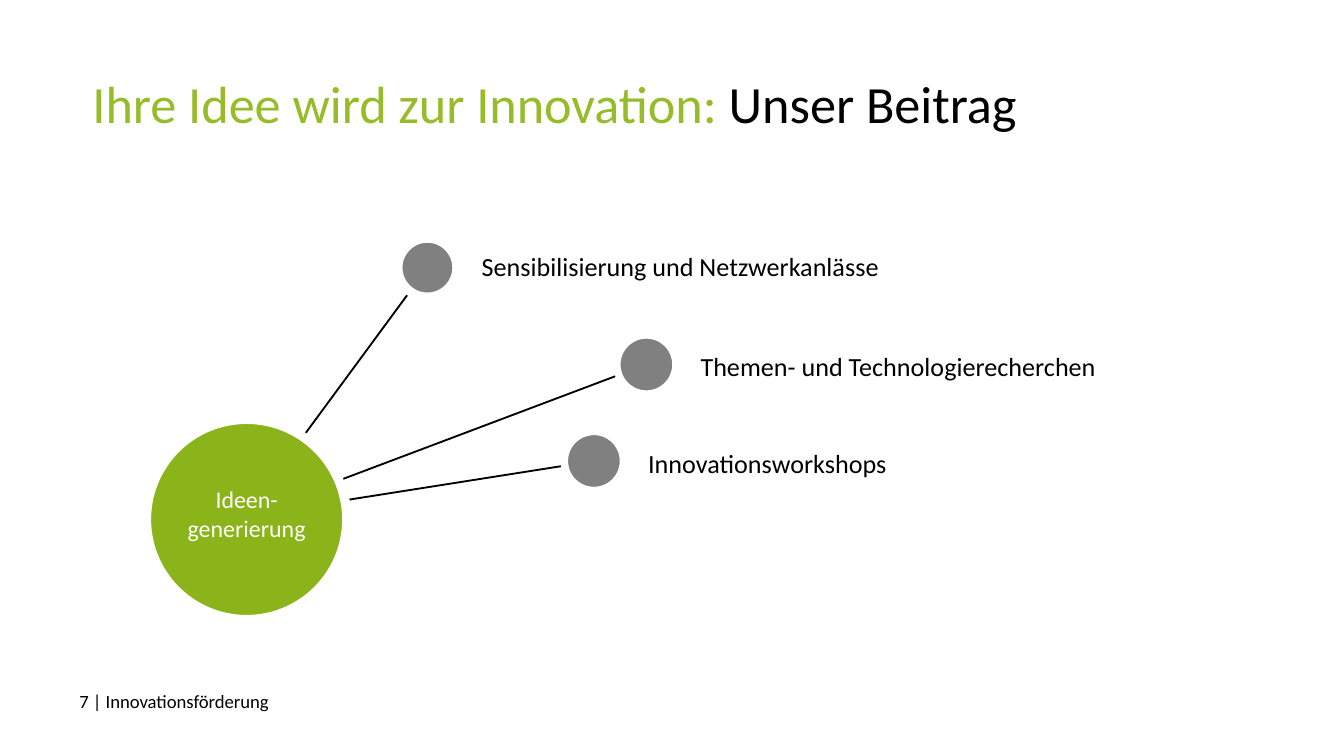
from pptx import Presentation
from pptx.dml.color import RGBColor
from pptx.enum.shapes import MSO_CONNECTOR, MSO_SHAPE
from pptx.enum.text import MSO_ANCHOR, PP_ALIGN
from pptx.oxml.ns import qn
from pptx.util import Pt
from lxml import etree

STRAIGHT = MSO_CONNECTOR.STRAIGHT
OVAL = MSO_SHAPE.OVAL
TOP, MIDDLE = MSO_ANCHOR.TOP, MSO_ANCHOR.MIDDLE
LEFT, CENTER = PP_ALIGN.LEFT, PP_ALIGN.CENTER

FONT = "Calibri"
BLACK, WHITE, GRAY = "000000", "FFFFFF", "808080"
TITLE_GREEN, HUB_GREEN = "97BC29", "8AB419"

TITLE = [("Ihre Idee wird zur Innovation:", TITLE_GREEN), (" Unser Beitrag", BLACK)]
FOOTER = "7 | Innovationsförderung"
HUB_LINES = ["Ideen-", "generierung"]
HUB_CENTER, HUB_SIZE = (132.1, 278.3), 107.3
LINE_START = (131, 276.5)
NODE_SIZE = 31.7
LABEL_SIZE = (272, 34)
LABEL_GAP = 12
SMALL_INSETS, LARGE_INSETS = (6.5, 3), (17, 8.5)

# label, node centre, outline width, vertical label offset
NODES = [
    ("Innovationsworkshops", (318.2, 247), 4, 1),
    ("Themen- und Technologierecherchen", (346.3, 195.3), 4, 1),
    ("Sensibilisierung und Netzwerkanlässe", (229, 143.4), 5, -1),
]


def color(value):
    """Return the colour for a hex string."""
    return RGBColor.from_string(value)


def write_text(shape, paragraphs, size, insets, align=LEFT, anchor=TOP):
    """Fill a shape with paragraphs, each a list of (text, colour) runs."""
    frame = shape.text_frame
    frame.word_wrap = True
    frame.vertical_anchor = anchor
    frame.margin_left = frame.margin_right = Pt(insets[0])
    frame.margin_top = frame.margin_bottom = Pt(insets[1])
    for index, runs in enumerate(paragraphs):
        paragraph = frame.add_paragraph() if index else frame.paragraphs[0]
        paragraph.alignment = align
        for text, run_color in runs:
            run = paragraph.add_run()
            run.text = text
            run.font.name = FONT
            run.font.size = Pt(size)
            run.font.color.rgb = color(run_color)


def add_text(slide, box, paragraphs, **text_format):
    """Add a text box at left, top, width, height."""
    shape = slide.shapes.add_textbox(*map(Pt, box))
    write_text(shape, paragraphs, **text_format)


def add_circle(slide, center, diameter, fill, outline_width):
    """Add a white-outlined circle around a centre."""
    left, top = (value - diameter / 2 for value in center)
    circle = slide.shapes.add_shape(OVAL, Pt(left), Pt(top), Pt(diameter), Pt(diameter))
    circle.shadow.inherit = False
    circle.fill.solid()
    circle.fill.fore_color.rgb = color(fill)
    circle.line.color.rgb = color(WHITE)
    circle.line.width = Pt(outline_width)


def add_line(slide, start, end):
    """Add a thin black line without shadow."""
    line = slide.shapes.add_connector(STRAIGHT, *map(Pt, start + end))
    line.line.color.rgb = color(BLACK)
    line.line.width = Pt(1)
    etree.SubElement(line._element.spPr, qn("a:effectLst"))


def add_node(slide, label, center, outline_width, label_offset):
    """Add a node with its line to the hub and its label."""
    add_line(slide, LINE_START, center)
    width, height = LABEL_SIZE
    box = (center[0] + LABEL_GAP, center[1] + label_offset - height / 2, width, height)
    add_text(slide, box, [[(label, BLACK)]], size=14, insets=LARGE_INSETS, anchor=MIDDLE)
    add_circle(slide, center, NODE_SIZE, GRAY, outline_width)


def main():
    """Build and save the slide."""
    presentation = Presentation()
    presentation.slide_width, presentation.slide_height = Pt(720), Pt(405)
    slide = presentation.slides.add_slide(presentation.slide_layouts[5])

    title = slide.shapes.title
    title.left, title.top, title.width, title.height = map(Pt, (43, 35, 641, 68))
    write_text(title, [TITLE], size=28, insets=SMALL_INSETS)
    add_text(slide, (36, 366.5, 648, 38), [[(FOOTER, BLACK)]], size=10, insets=SMALL_INSETS)

    for node in NODES:
        add_node(slide, *node)
    add_circle(slide, HUB_CENTER, HUB_SIZE, HUB_GREEN, 5)
    add_text(slide, (81.4, 251.3, 101.5, 54.7), [[(line, WHITE)] for line in HUB_LINES],
             size=12.8, insets=LARGE_INSETS, align=CENTER)
    presentation.save("out.pptx")


if __name__ == "__main__":
    main()
